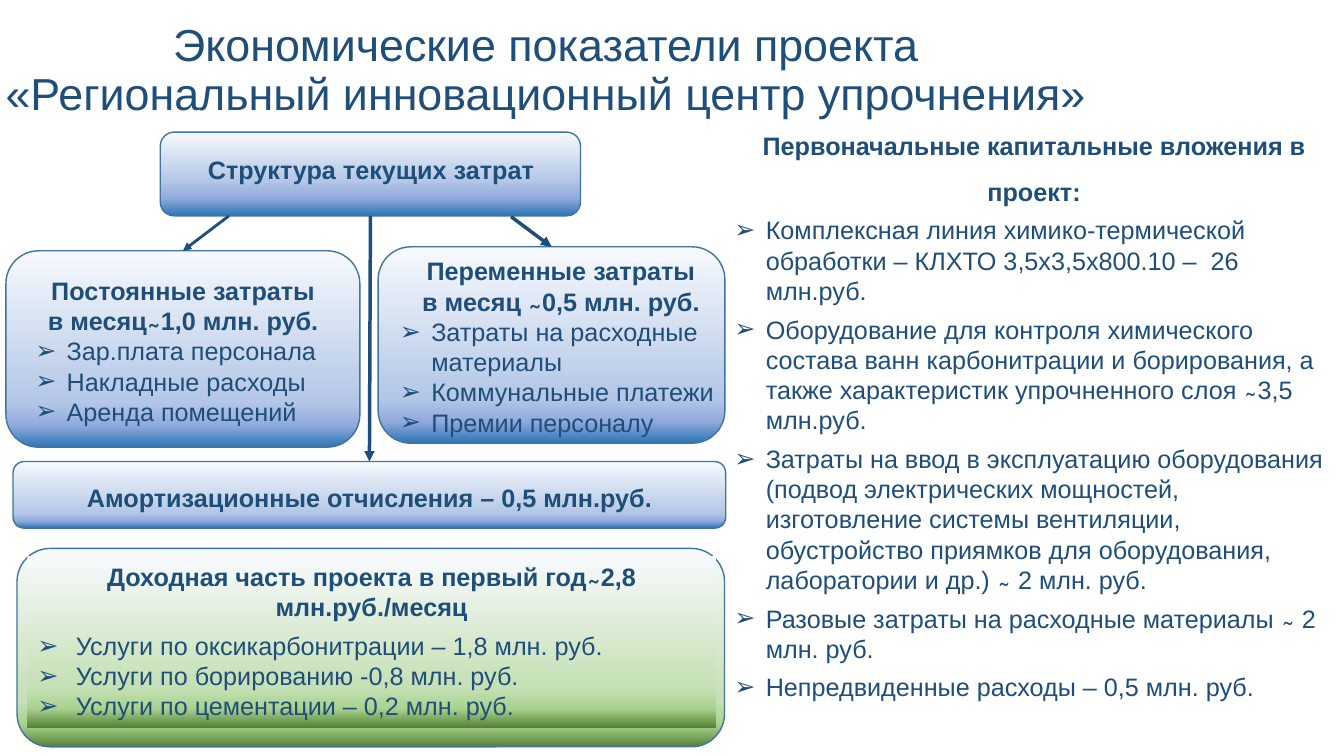
from lxml.etree import SubElement
from pptx import Presentation
from pptx.dml.color import RGBColor
from pptx.enum.shapes import MSO_CONNECTOR as Link, MSO_SHAPE as Form
from pptx.enum.text import MSO_ANCHOR as Anchor, MSO_AUTO_SIZE as AutoSize, PP_ALIGN as Align
from pptx.oxml.ns import qn
from pptx.util import Cm, Pt

BLUE_SHORT = [(0, "F7FAFD"), (58, "B4C7E7"), (79, "8FAADC"), (100, "2E75B6")]
BLUE = [(0, "F7FAFD"), (77, "B4C7E7"), (89, "8FAADC"), (100, "2E75B6")]
GREEN = [(0, "F7FAFD"), (77, "C5E0B4"), (89, "A9D18E"), (100, "548235")]


def color(code):
    return RGBColor.from_string(code)


def add_text(frame, text, *, font="Arial", ink="1F4E79", size=18, bold=False, align=Align.LEFT,
             indent=None, before=0, after=0, spacing=1.0):
    last = frame.paragraphs[-1]
    para = frame.add_paragraph() if last.runs else last
    para.alignment = align
    para.space_before, para.space_after = Pt(before), Pt(after)
    para.line_spacing = spacing
    if indent:
        props = para._p.get_or_add_pPr()
        props.set("marL", str(Cm(indent)))
        props.set("indent", str(-Cm(indent)))
        SubElement(props, qn("a:buFont"), typeface=font)
        SubElement(props, qn("a:buChar"), char="➢")
    span = para.add_run()
    span.text = text
    span.font.name, span.font.size, span.font.bold = font, Pt(size), bold
    span.font.color.rgb = color(ink)


class CostSlide:
    """Holds the style and the current slide and draws its elements."""

    outline = "43739E"
    arrow = "1F4E79"

    def __init__(self, page):
        self.page = page

    def text_box(self, place, wrap=True, grow=True):
        box = self.page.shapes.add_textbox(*map(Cm, place))
        frame = box.text_frame
        frame.word_wrap = wrap
        frame.auto_size = AutoSize.SHAPE_TO_FIT_TEXT if grow else AutoSize.NONE
        return frame

    def panel(self, place, stops, form=Form.ROUNDED_RECTANGLE, outlined=True):
        box = self.page.shapes.add_shape(form, *map(Cm, place))
        box.shadow.inherit = False
        box.fill.gradient()
        box.fill.gradient_angle = 270
        stop_list = box._element.spPr.find(qn("a:gradFill")).find(qn("a:gsLst"))
        stop_list.clear()
        for percent, code in stops:
            stop = SubElement(stop_list, qn("a:gs"), pos=str(percent * 1000))
            SubElement(stop, qn("a:srgbClr"), val=code)
        if outlined:
            box.line.color.rgb = color(self.outline)
            box.line.width = Pt(1)
        else:
            box.line.fill.background()
        return box

    def arrow_line(self, start, end, target, source=None, width=2.5):
        line = self.page.shapes.add_connector(Link.STRAIGHT, *map(Cm, start + end))
        if source:
            line.begin_connect(source, 2)
        line.end_connect(target, 0)
        line.line.color.rgb = color(self.arrow)
        line.line.width = Pt(width)
        SubElement(line.line._get_or_add_ln(), qn("a:tailEnd"), type="triangle")
        SubElement(line._element.spPr, qn("a:effectLst"))

    def listing(self, frame, headings, items, indent=0.79, before=0, **heading_format):
        for heading in headings:
            add_text(frame, heading, bold=True, align=Align.CENTER, **heading_format)
        for item in items:
            add_text(frame, item, indent=indent, before=before)


def main():
    deck = Presentation()
    deck.slide_width, deck.slide_height = Cm(33.87), Cm(19.05)
    costs = CostSlide(deck.slides.add_slide(deck.slide_layouts[6]))

    title = costs.text_box((-0.84, 0.46, 29.21, 3.68), grow=False)
    for text in ("Экономические показатели проекта",
                 "«Региональный инновационный центр упрочнения»"):
        add_text(title, text, size=32, align=Align.CENTER, spacing=0.9)

    structure = costs.panel((4.04, 3.33, 10.59, 2.11), BLUE_SHORT)
    costs.listing(costs.text_box((4.93, 3.76, 8.84, 1.02), wrap=False),
                  ["Структура текущих затрат"], [])

    fixed = costs.panel((0.15, 6.32, 8.92, 4.95), BLUE)
    costs.listing(costs.text_box((0.64, 6.81, 7.95, 3.99)),
                  ["Постоянные затраты", "в месяц ̴ 1,0 млн. руб."],
                  ["Зар.плата персонала", "Накладные расходы", "Аренда помещений"])

    variable = costs.panel((9.53, 6.22, 8.74, 4.95), BLUE)
    costs.listing(costs.text_box((9.83, 6.32, 8.61, 5.31)),
                  ["Переменные затраты", "в месяц  ̴ 0,5 млн. руб."],
                  ["Затраты на расходные материалы", "Коммунальные платежи",
                   "Премии персоналу"])

    depreciation = costs.panel((0.33, 11.63, 17.96, 1.68), BLUE)
    costs.listing(costs.text_box((1.3, 12.04, 16.03, 0.71)),
                  ["Амортизационные отчисления – 0,5 млн.руб."], [])

    costs.panel((0.43, 13.82, 17.83, 5), GREEN)
    income = costs.panel((0.69, 14.02, 17.35, 4.32), GREEN, Form.RECTANGLE, outlined=False)
    income.text_frame.word_wrap = True
    income.text_frame.vertical_anchor = Anchor.TOP
    costs.listing(income.text_frame,
                  ["Доходная часть проекта в первый год ̴ 2,8 млн.руб./месяц"],
                  ["Услуги по оксикарбонитрации – 1,8 млн. руб.",
                   "Услуги по борированию -0,8 млн. руб.",
                   "Услуги по цементации – 0,2 млн. руб."], indent=0.97, after=6)

    costs.listing(costs.text_box((18.26, 2.79, 15.6, 15.39)),
                  ["Первоначальные капитальные вложения в проект:"],
                  ["Комплексная линия химико-термической обработки – "
                   "КЛХТО 3,5х3,5х800.10 –  26 млн.руб.",
                   "Оборудование для контроля химического состава ванн карбонитрации "
                   "и борирования, а также характеристик упрочненного слоя  ̴ 3,5 млн.руб.",
                   "Затраты на ввод в эксплуатацию оборудования (подвод электрических "
                   "мощностей, изготовление системы вентиляции, обустройство приямков "
                   "для оборудования, лаборатории и др.)  ̴  2 млн. руб.",
                   "Разовые затраты на расходные материалы  ̴  2 млн. руб.",
                   "Непредвиденные расходы – 0,5 млн. руб."], before=6, spacing=1.5)

    costs.arrow_line((5.77, 5.44), (4.61, 6.32), fixed, width=2)
    costs.arrow_line((12.88, 5.46), (13.9, 6.22), variable)
    costs.arrow_line((9.34, 5.44), (9.31, 11.63), depreciation, source=structure)

    deck.save("out.pptx")


if __name__ == "__main__":
    main()
